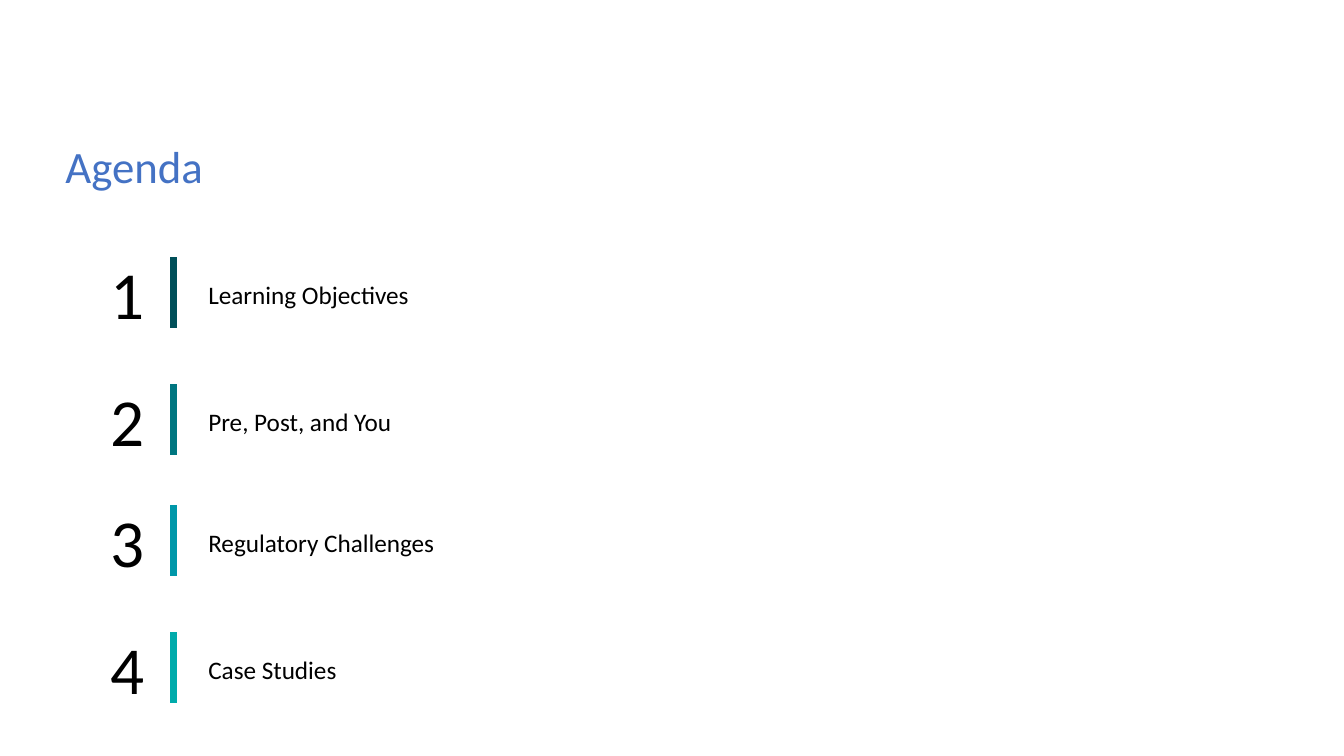
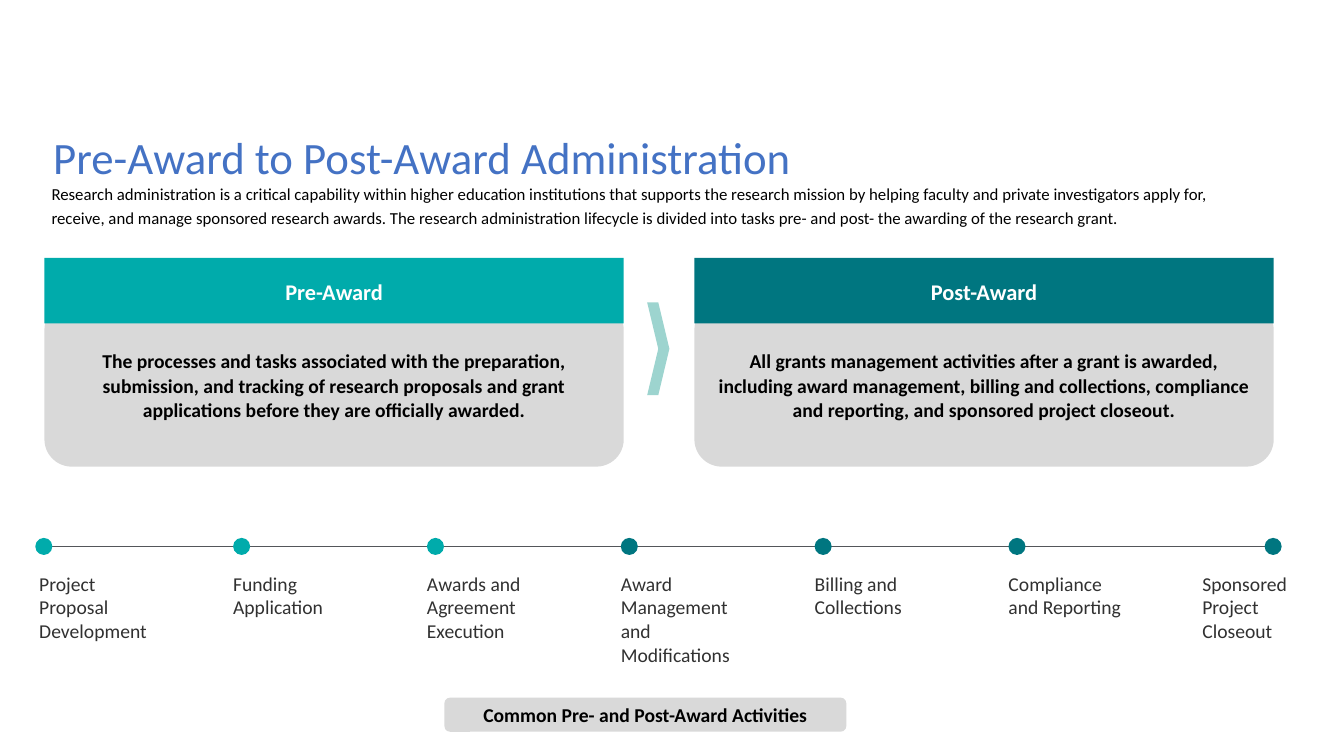
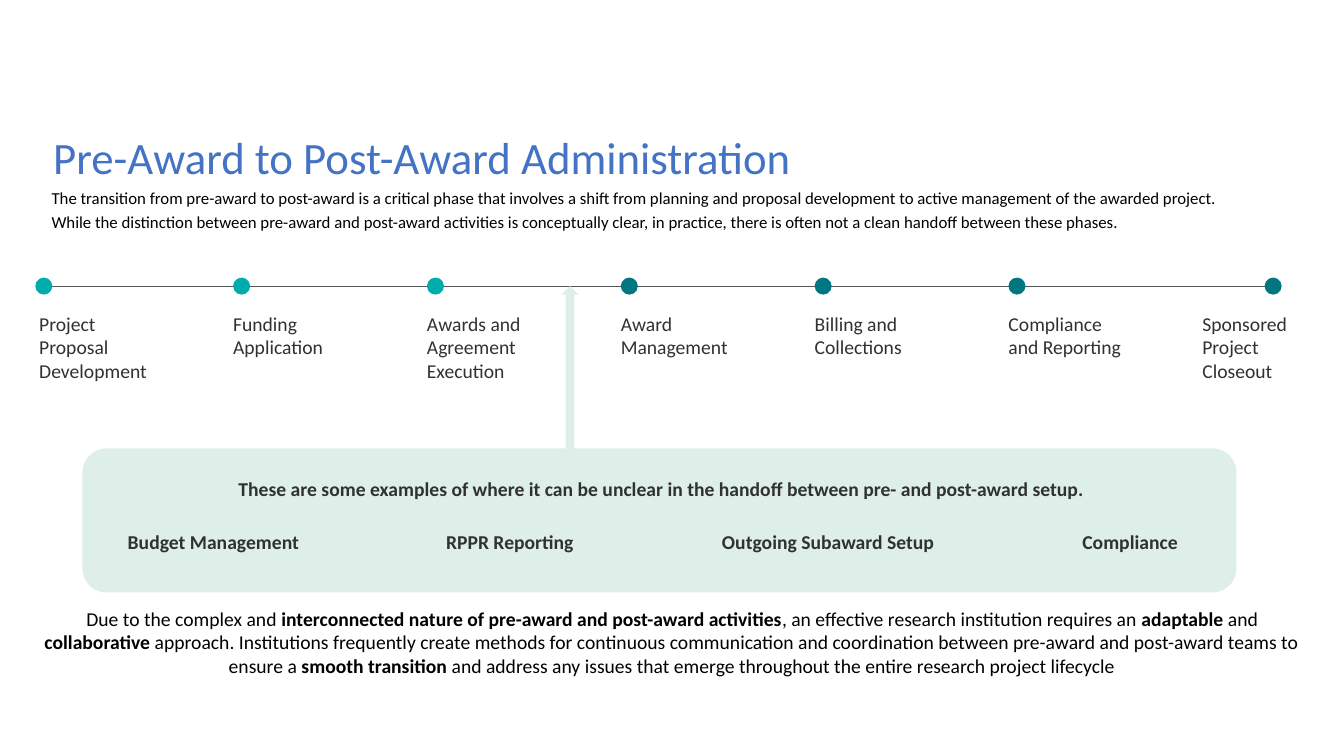
from dataclasses import dataclass, replace

import lxml.etree
import pptx
import pptx.dml.color
import pptx.enum.shapes
import pptx.enum.text
import pptx.oxml.ns
import pptx.presentation
import pptx.shapes.autoshape
import pptx.shapes.connector
import pptx.shapes.shapetree
import pptx.slide
import pptx.text.text
import pptx.util

Cm = pptx.util.Cm
Align = pptx.enum.text.PP_ALIGN
Anchor = pptx.enum.text.MSO_ANCHOR
Preset = pptx.enum.shapes.MSO_SHAPE
Shapes = pptx.shapes.shapetree.SlideShapes | pptx.shapes.shapetree.GroupShapes

# Shared look
FONT = "Calibri"
BLUE, BLACK, WHITE, CHARCOAL = "4472C4", "000000", "FFFFFF", "313131"
TEAL, DEEP_TEAL, PALE_TEAL, MINT = "00ABAB", "007680", "9DD4CF", "DDEFE8"
LIGHT_GRAY, LINE_GRAY = "D9D9D9", "53565A"
TITLE_ONLY_LAYOUT = 5


@dataclass(frozen=True)
class TextStyle:
    size: float
    color: str = BLACK
    bold: bool = False
    align: Align = Align.LEFT
    line_spacing: float = 1.0


@dataclass(frozen=True)
class Box:
    left: float
    top: float
    width: float
    height: float

    def lengths(self) -> tuple[pptx.util.Length, ...]:
        return Cm(self.left), Cm(self.top), Cm(self.width), Cm(self.height)


@dataclass(frozen=True)
class Margins:
    horizontal: float = 0.25
    vertical: float = 0.13


@dataclass(frozen=True)
class Run:
    text: str
    bold: bool = False


@dataclass(frozen=True)
class AgendaItem:
    label: str
    color: str
    top: float


@dataclass(frozen=True)
class Panel:
    left: float
    color: str
    heading: str
    body: str


@dataclass(frozen=True)
class Milestone:
    label: str
    color: str
    dot_shift: float = 0


@dataclass(frozen=True)
class Example:
    label: str
    width: float


TITLE = TextStyle(32, BLUE, line_spacing=0.9)
INTRO = TextStyle(12, line_spacing=1.2)
NUMBER = TextStyle(48)
AGENDA_LABEL = TextStyle(18)
PANEL_HEADING = TextStyle(16, WHITE, True, Align.CENTER, 1.06)
PANEL_BODY = TextStyle(14, BLACK, True, Align.CENTER, 1.06)
CAPTION = TextStyle(14, BLACK, True, Align.CENTER)
MILESTONE_LABEL = TextStyle(14, CHARCOAL)
EXAMPLE_LABEL = TextStyle(14, CHARCOAL, True, Align.CENTER)
CLOSING = TextStyle(14, align=Align.CENTER)
NO_MARGINS = Margins(0, 0)

# Content
AWARD_TITLE = "Pre-Award to Post-Award Administration"
AGENDA = [
    AgendaItem("Learning Objectives", "004F59", 6.48),
    AgendaItem("Pre, Post, and You", DEEP_TEAL, 9.68),
    AgendaItem("Regulatory Challenges", "0097A9", 12.73),
    AgendaItem("Case Studies", TEAL, 15.93),
]
PANELS = [
    Panel(1.12, TEAL, "Pre-Award",
          "The processes and tasks associated with the preparation, submission, and "
          "tracking of research proposals and grant applications before they are "
          "officially awarded."),
    Panel(17.5, DEEP_TEAL, "Post-Award",
          "All grants management activities after a grant is awarded, including award "
          "management, billing and collections, compliance and reporting, and sponsored "
          "project closeout."),
]
MILESTONES = [
    Milestone("Project Proposal Development", TEAL, -0.1),
    Milestone("Funding Application", TEAL),
    Milestone("Awards and Agreement Execution", TEAL),
    Milestone("Award Management", DEEP_TEAL),
    Milestone("Billing and Collections", DEEP_TEAL),
    Milestone("Compliance and Reporting", DEEP_TEAL),
    Milestone("Sponsored Project Closeout", DEEP_TEAL, 1.57),
]
EXAMPLES = [
    Example("Budget Management", 5.38),
    Example("RPPR Reporting", 3.84),
    Example("Outgoing Subaward Setup", 6.48),
    Example("Compliance", 3.02),
]
CLOSING_RUNS = [
    Run("Due to the complex and "),
    Run("interconnected nature of pre-award and post-award activities", True),
    Run(", an effective research institution requires an "),
    Run("adaptable", True),
    Run(" and "),
    Run("collaborative", True),
    Run(" approach. Institutions frequently create methods for continuous communication "
        "and coordination between pre-award and post-award teams to ensure a "),
    Run("smooth transition ", True),
    Run("and address any issues that emerge throughout the entire research project lifecycle"),
]


# Drawing helpers
def rgb(value: str) -> pptx.dml.color.RGBColor:
    return pptx.dml.color.RGBColor.from_string(value)


def write_text(frame: pptx.text.text.TextFrame, runs: list[Run], style: TextStyle,
               margins: Margins = Margins(), anchor: Anchor = Anchor.TOP,
               wrap: bool = True) -> None:
    frame.auto_size = pptx.enum.text.MSO_AUTO_SIZE.NONE
    frame.word_wrap = wrap
    frame.vertical_anchor = anchor
    frame.margin_left = frame.margin_right = Cm(margins.horizontal)
    frame.margin_top = frame.margin_bottom = Cm(margins.vertical)
    paragraph = frame.paragraphs[0]
    paragraph.alignment = style.align
    paragraph.line_spacing = style.line_spacing
    paragraph.font.name = FONT
    paragraph.font.size = pptx.util.Pt(style.size)
    paragraph.font.color.rgb = rgb(style.color)
    paragraph.font.bold = style.bold
    for item in runs:
        run = paragraph.add_run()
        run.text = item.text
        if item.bold:
            run.font.bold = True


def add_text(shapes: Shapes, box: Box, text: str, style: TextStyle,
             margins: Margins = Margins(), wrap: bool = True) -> None:
    text_box = shapes.add_textbox(*box.lengths())
    write_text(text_box.text_frame, [Run(text)], style, margins, wrap=wrap)


def add_filled(shapes: Shapes, preset: Preset, box: Box,
               color: str) -> pptx.shapes.autoshape.Shape:
    shape = shapes.add_shape(preset, *box.lengths())
    shape.shadow.inherit = False
    shape.fill.solid()
    shape.fill.fore_color.rgb = rgb(color)
    shape.line.fill.background()
    return shape


def add_line(shapes: Shapes, start: tuple[float, float], end: tuple[float, float],
             color: str, width: float) -> pptx.shapes.connector.Connector:
    connector = shapes.add_connector(
        pptx.enum.shapes.MSO_CONNECTOR.STRAIGHT, *map(Cm, start), *map(Cm, end))
    connector.line.color.rgb = rgb(color)
    connector.line.width = pptx.util.Pt(width)
    lxml.etree.SubElement(connector.element.spPr, pptx.oxml.ns.qn("a:effectLst"))
    return connector


def add_titled_slide(presentation: pptx.presentation.Presentation, title: str,
                     left: float, top: float) -> pptx.slide.Slide:
    slide = presentation.slides.add_slide(presentation.slide_layouts[TITLE_ONLY_LAYOUT])
    placeholder = slide.shapes.title
    placeholder.left, placeholder.top, placeholder.width, placeholder.height = (
        Box(left, top, 31.09, 1.24).lengths())
    write_text(placeholder.text_frame, [Run(title)], TITLE)
    return slide


def add_intro(slide: pptx.slide.Slide, top: float, text: str) -> None:
    add_text(slide.shapes, Box(1.12, top, 30.2, 1.93), text, INTRO, Margins(0.18, 0.08))


def add_timeline(slide: pptx.slide.Slide, center: float,
                 milestones: list[Milestone]) -> None:
    first_left, pitch, diameter = 0.99, 4.885, 0.43
    axis = add_line(slide.shapes, (1.12, center), (32.13, center), LINE_GRAY, 0.75)
    for end in ("a:headEnd", "a:tailEnd"):
        lxml.etree.SubElement(axis.line._get_or_add_ln(), pptx.oxml.ns.qn(end), type="oval")
    for index, milestone in enumerate(milestones):
        left = first_left + index * pitch
        group = slide.shapes.add_group_shape().shapes
        add_filled(group, Preset.OVAL,
                   Box(left + milestone.dot_shift, center - diameter / 2, diameter, diameter),
                   milestone.color)
        add_text(group, Box(left, center + 0.64, 3.02, 1.8), milestone.label,
                 MILESTONE_LABEL, NO_MARGINS)


# Slides
def build_agenda(presentation: pptx.presentation.Presentation) -> None:
    slide = add_titled_slide(presentation, "Agenda", 1.4, 3.53)
    for number, item in enumerate(AGENDA, start=1):
        group = slide.shapes.add_group_shape().shapes
        add_text(group, Box(2.54, item.top - 0.25, 1.37, 2.31), str(number), NUMBER,
                 wrap=False)
        add_text(group, Box(5, item.top + 0.43, 6.2, 1.02), item.label, AGENDA_LABEL,
                 wrap=False)
        add_line(group, (4.38, item.top), (4.38, item.top + 1.79), item.color, 5)


def build_phases(presentation: pptx.presentation.Presentation) -> None:
    slide = add_titled_slide(presentation, AWARD_TITLE, 1.09, 3.3)
    add_intro(slide, 4.45,
              "Research administration is a critical capability within higher education "
              "institutions that supports the research mission by helping faculty and private "
              "investigators apply for, receive, and manage sponsored research awards. The "
              "research administration lifecycle is divided into tasks pre- and post- the "
              "awarding of the research grant.")

    # Two phases with a chevron between them
    add_filled(slide.shapes, Preset.CHEVRON, Box(16.31, 7.62, 0.56, 2.34), PALE_TEAL)
    for panel in PANELS:
        parts = [
            (Preset.ROUNDED_RECTANGLE, Box(panel.left, 7.62, 14.6, 4.14), LIGHT_GRAY,
             panel.body, PANEL_BODY),
            (Preset.RECTANGLE, Box(panel.left, 6.5, 14.6, 1.65), panel.color,
             panel.heading, PANEL_HEADING),
        ]
        for preset, box, color, text, style in parts:
            shape = add_filled(slide.shapes, preset, box, color)
            write_text(shape.text_frame, [Run(text)], style, Margins(0.25, 0.25),
                       Anchor.MIDDLE)

    # Timeline and its caption
    milestones = [
        replace(milestone, label="Award Management and Modifications")
        if milestone.label == "Award Management" else milestone
        for milestone in MILESTONES
    ]
    add_timeline(slide, 13.77, milestones)
    caption = add_filled(slide.shapes, Preset.ROUNDED_RECTANGLE,
                         Box(11.2, 17.58, 10.13, 0.86), LIGHT_GRAY)
    write_text(caption.text_frame, [Run("Common Pre- and Post-Award Activities")], CAPTION,
               anchor=Anchor.MIDDLE)


def build_handoff(presentation: pptx.presentation.Presentation) -> None:
    slide = add_titled_slide(presentation, AWARD_TITLE, 1.09, 3.28)
    add_intro(slide, 4.55,
              "The transition from pre-award to post-award is a critical phase that involves a "
              "shift from planning and proposal development to active management of the awarded "
              "project. While the distinction between pre-award and post-award activities is "
              "conceptually clear, in practice, there is often not a clean handoff between "
              "these phases.")
    add_timeline(slide, 7.21, MILESTONES)

    # Callout pointing at the handoff
    add_filled(slide.shapes, Preset.UP_ARROW, Box(14.15, 7.21, 0.43, 4.34), MINT)
    add_filled(slide.shapes, Preset.ROUNDED_RECTANGLE, Box(2.08, 11.3, 29.08, 3.63), MINT)
    add_text(slide.shapes, Box(2.18, 12.01, 28.98, 0.6),
             "These are some examples of where it can be unclear in the handoff between "
             "pre- and post-award setup.", EXAMPLE_LABEL, NO_MARGINS)
    left, gap = 2.69, 2.86
    for example in EXAMPLES:
        add_text(slide.shapes, Box(left, 13.36, example.width, 0.6), example.label,
                 EXAMPLE_LABEL, NO_MARGINS)
        left += example.width + gap

    # Closing statement
    closing = slide.shapes.add_textbox(*Box(0.58, 15.16, 32.72, 2.06).lengths())
    write_text(closing.text_frame, CLOSING_RUNS, CLOSING)


def main() -> None:
    presentation = pptx.Presentation()
    presentation.slide_width = Cm(33.87)
    presentation.slide_height = Cm(19.05)
    build_agenda(presentation)
    build_phases(presentation)
    build_handoff(presentation)
    presentation.save("out.pptx")


if __name__ == "__main__":
    main()
